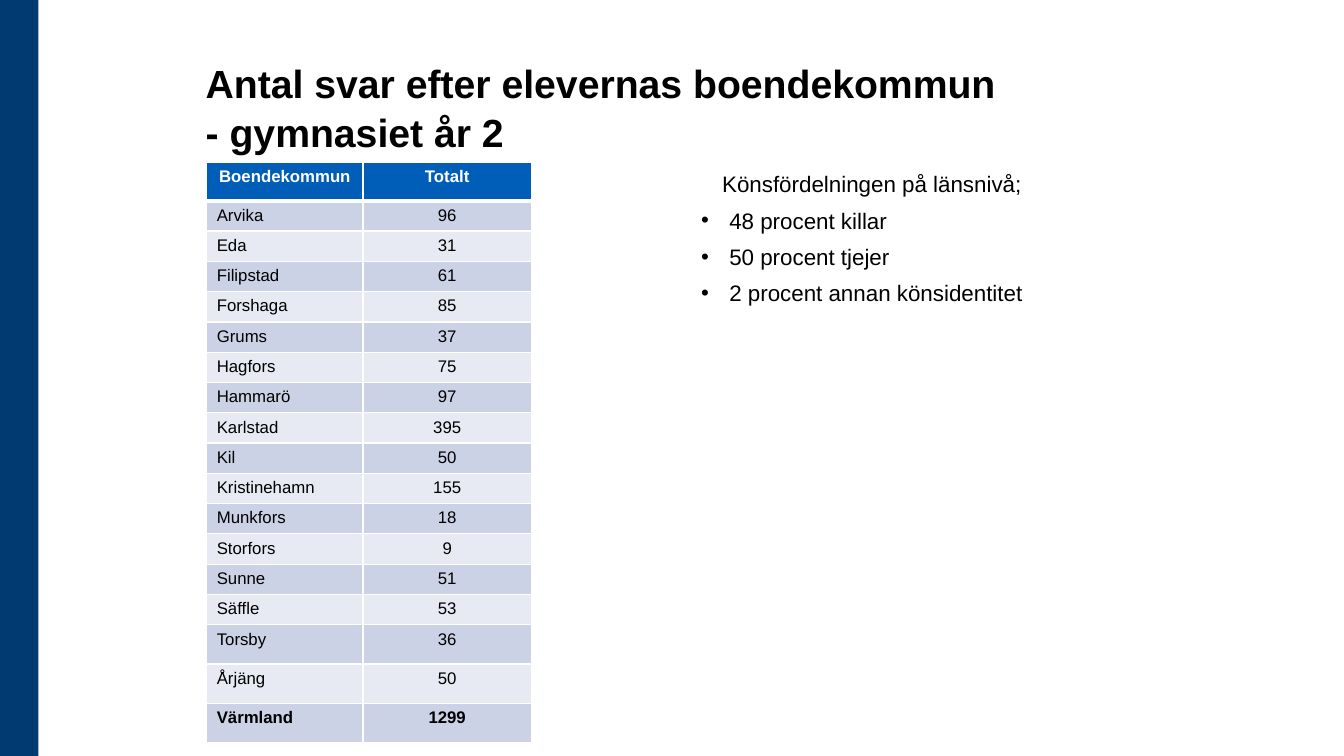
from dataclasses import dataclass

from lxml import etree
from pptx import Presentation
from pptx.dml.color import RGBColor
from pptx.enum.shapes import MSO_SHAPE
from pptx.enum.text import MSO_ANCHOR, MSO_AUTO_SIZE, PP_ALIGN
from pptx.oxml.ns import qn
from pptx.util import Cm, Pt

RECTANGLE = MSO_SHAPE.RECTANGLE
TOP = MSO_ANCHOR.TOP
NO_AUTOFIT = MSO_AUTO_SIZE.NONE
LEFT, CENTER = PP_ALIGN.LEFT, PP_ALIGN.CENTER
TITLE_ONLY = 5


@dataclass(frozen=True)
class Theme:
    font: str = "Arial"
    black: str = "000000"
    white: str = "FFFFFF"
    side_bar: str = "003A70"
    header: str = "005EB8"
    bands: tuple = ("CCD2E6", "E7EAF3")
    title_size: int = 28
    body_size: int = 16
    table_size: int = 12
    line_spacing: float = 1.04
    thin_border: int = 1
    thick_border: int = 3


THEME = Theme()

TITLE = "Antal svar efter elevernas boendekommun \v- gymnasiet år 2"
GENDER_HEADING = "Könsfördelningen på länsnivå;"
GENDER_SHARES = ["48 procent killar", "50 procent tjejer", "2 procent annan könsidentitet"]
TABLE_HEADER = ("Boendekommun", "Totalt")
ANSWERS = [
    ("Arvika", 96), ("Eda", 31), ("Filipstad", 61), ("Forshaga", 85),
    ("Grums", 37), ("Hagfors", 75), ("Hammarö", 97), ("Karlstad", 395),
    ("Kil", 50), ("Kristinehamn", 155), ("Munkfors", 18), ("Storfors", 9),
    ("Sunne", 51), ("Säffle", 53), ("Torsby", 36), ("Årjäng", 50),
    ("Värmland", 1299),
]
COLUMN_WIDTHS = (3.94, 4.24)
HEADER_HEIGHT, ROW_HEIGHT, TALL_ROW_HEIGHT = 0.97, 0.74, 0.99
TALL_ROWS = 3


def write_text(paragraph, text, size, color=THEME.black, bold=False,
               align=LEFT, line_spacing=None, space_before=0):
    paragraph.text = text
    paragraph.alignment = align
    paragraph.space_before = Pt(space_before)
    if line_spacing:
        paragraph.line_spacing = line_spacing
    for run in paragraph.runs:
        run.font.name = THEME.font
        run.font.size = Pt(size)
        run.font.bold = bold
        run.font.color.rgb = RGBColor.from_string(color)


def set_indent(paragraph, left, bullet=None):
    """Indent a paragraph; a bullet hangs in the indent."""
    properties = paragraph._p.get_or_add_pPr()
    properties.set("marL", str(Cm(left)))
    properties.set("indent", str(-Cm(left) if bullet else 0))
    if bullet:
        etree.SubElement(properties, qn("a:buFont"), typeface=THEME.font)
        etree.SubElement(properties, qn("a:buChar"), char=bullet)


def set_borders(cell, top, bottom):
    """Draw white cell borders; top and bottom are widths in points."""
    properties = cell._tc.get_or_add_tcPr()
    widths = {"lnL": THEME.thin_border, "lnR": THEME.thin_border,
              "lnT": top, "lnB": bottom}
    for side, width in widths.items():
        line = etree.SubElement(properties, qn(f"a:{side}"), w=str(Pt(width)))
        fill = etree.SubElement(line, qn("a:solidFill"))
        etree.SubElement(fill, qn("a:srgbClr"), val=THEME.white)


def add_side_bar(slide, left, top, width, height):
    bar = slide.shapes.add_shape(RECTANGLE, Cm(left), Cm(top), Cm(width), Cm(height))
    bar.shadow.inherit = False
    bar.fill.solid()
    bar.fill.fore_color.rgb = RGBColor.from_string(THEME.side_bar)
    bar.line.fill.background()


def place_title(slide, left, top, width, height):
    title = slide.shapes.title
    title.left, title.top = Cm(left), Cm(top)
    title.width, title.height = Cm(width), Cm(height)
    frame = title.text_frame
    frame.auto_size = NO_AUTOFIT
    frame.word_wrap = True
    frame.vertical_anchor = TOP
    write_text(frame.paragraphs[0], TITLE, THEME.title_size, bold=True,
               line_spacing=THEME.line_spacing)


def add_gender_list(slide, left, top, width, height):
    box = slide.shapes.add_textbox(Cm(left), Cm(top), Cm(width), Cm(height))
    frame = box.text_frame
    frame.word_wrap = True
    heading = frame.paragraphs[0]
    set_indent(heading, 0.53)
    write_text(heading, GENDER_HEADING, THEME.body_size,
               line_spacing=THEME.line_spacing)
    for share in GENDER_SHARES:
        paragraph = frame.add_paragraph()
        set_indent(paragraph, 0.71, bullet="•")
        write_text(paragraph, share, THEME.body_size,
                   line_spacing=THEME.line_spacing, space_before=6)


def add_answer_table(slide, left, top):
    rows = [TABLE_HEADER] + ANSWERS
    normal_rows = len(ANSWERS) - TALL_ROWS
    heights = [HEADER_HEIGHT] + [ROW_HEIGHT] * normal_rows + [TALL_ROW_HEIGHT] * TALL_ROWS
    table = slide.shapes.add_table(
        len(rows), len(COLUMN_WIDTHS), Cm(left), Cm(top),
        Cm(sum(COLUMN_WIDTHS)), Cm(sum(heights))).table
    for column, width in zip(table.columns, COLUMN_WIDTHS):
        column.width = Cm(width)
    for row_index, (values, height) in enumerate(zip(rows, heights)):
        table.rows[row_index].height = Cm(height)
        is_header = row_index == 0
        is_total = row_index == len(rows) - 1
        fill = THEME.header if is_header else THEME.bands[(row_index - 1) % 2]
        for column_index, value in enumerate(values):
            cell = table.cell(row_index, column_index)
            set_borders(
                cell,
                top=THEME.thick_border if row_index == 1 else THEME.thin_border,
                bottom=THEME.thick_border if is_header else THEME.thin_border)
            cell.fill.solid()
            cell.fill.fore_color.rgb = RGBColor.from_string(fill)
            write_text(
                cell.text_frame.paragraphs[0], str(value), THEME.table_size,
                color=THEME.white if is_header else THEME.black,
                bold=is_header or is_total,
                align=CENTER if is_header or column_index else LEFT)


def main():
    presentation = Presentation()
    presentation.slide_width, presentation.slide_height = Cm(33.87), Cm(19.05)
    slide = presentation.slides.add_slide(presentation.slide_layouts[TITLE_ONLY])
    add_side_bar(slide, 0, 0, 0.97, 19.05)
    place_title(slide, 4.93, 1.32, 24, 3.68)
    add_gender_list(slide, 17.42, 4.14, 12.7, 8.99)
    add_answer_table(slide, 5.21, 4.09)
    presentation.save("out.pptx")


if __name__ == "__main__":
    main()
